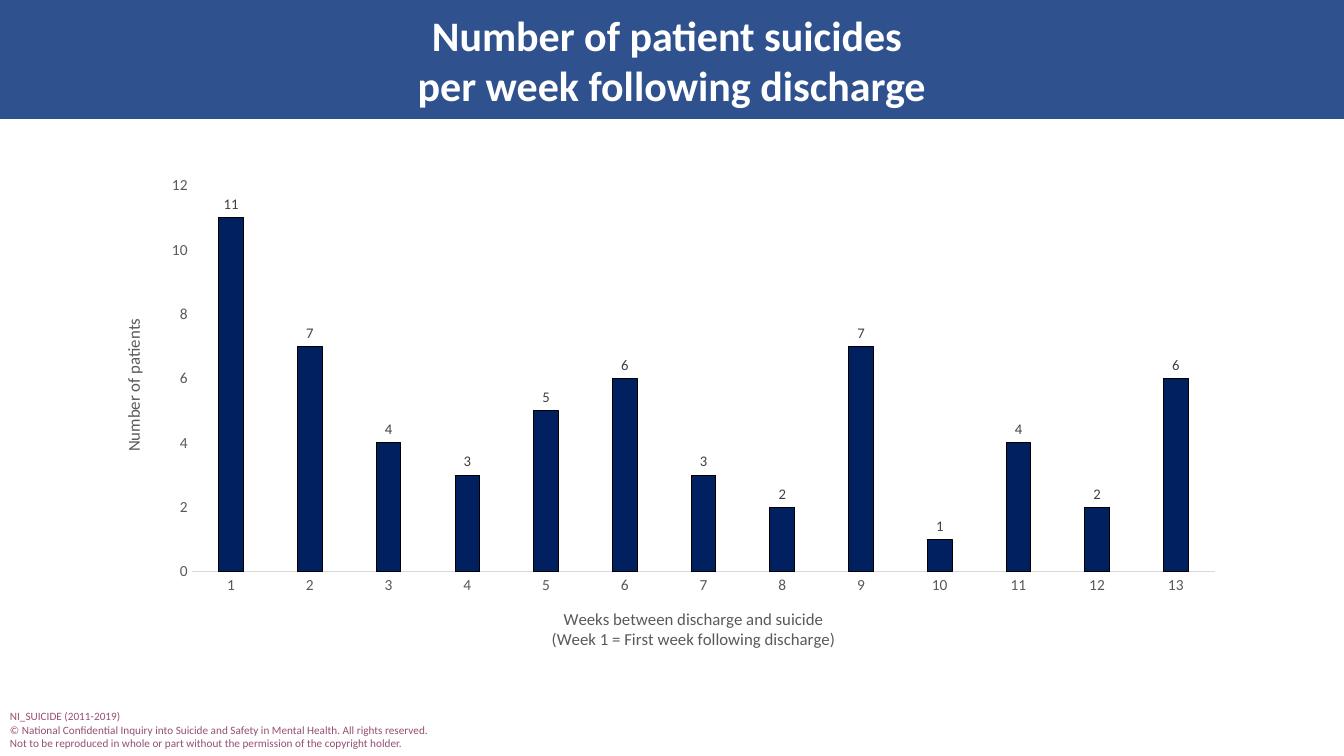
from lxml import etree
from pptx import Presentation
from pptx.chart.data import CategoryChartData
from pptx.dml.color import RGBColor
from pptx.enum.chart import XL_CHART_TYPE as ChartType, XL_LABEL_POSITION as LabelPosition
from pptx.enum.chart import XL_TICK_MARK as TickMark
from pptx.enum.shapes import MSO_SHAPE as Preset
from pptx.enum.text import MSO_ANCHOR as Anchor, MSO_AUTO_SIZE as AutoSize, PP_ALIGN as Align
from pptx.oxml.ns import qn
from pptx.util import Inches, Pt

FONT = "Calibri"
COLORS = {
    "banner": "2F528F", "title": "FFFFFF", "footer": "954F72",
    "bar": "002060", "outline": "000000", "axis_text": "595959",
    "axis_line": "D9D9D9", "label": "404040",
}
TITLE = ["Number of patient suicides ", "per week following discharge"]
FOOTER = [
    "NI_SUICIDE (2011-2019)",
    "© National Confidential Inquiry into Suicide and Safety in Mental Health. All rights reserved.",
    "Not to be reproduced in whole or part without the permission of the copyright holder.",
]
WEEK_TITLE = ["Weeks between discharge and suicide", "(Week 1 = First week following discharge)"]
PATIENTS_PER_WEEK = [11, 7, 4, 3, 5, 6, 3, 2, 7, 1, 4, 2, 6]


def color(name):
    return RGBColor.from_string(COLORS[name])


def style_font(font, size, color_name, bold=False):
    font.name, font.size, font.bold = FONT, Pt(size), bold
    font.color.rgb = color(color_name)


def write_lines(frame, lines, size, color_name, bold=False, align=None):
    """Write one paragraph per line, all in the same font."""
    for index, line in enumerate(lines):
        paragraph = frame.add_paragraph() if index else frame.paragraphs[0]
        paragraph.text = line
        paragraph.alignment = align
        style_font(paragraph.font, size, color_name, bold)


def add_banner(slide, left, top, width, height):
    banner = slide.shapes.add_shape(
        Preset.RECTANGLE, Inches(left), Inches(top), Inches(width), Inches(height))
    banner.shadow.inherit = False
    banner.fill.solid()
    banner.fill.fore_color.rgb = color("banner")
    banner.line.fill.background()
    margin = 0.14
    title = slide.shapes.add_textbox(
        Inches(left), Inches(top + margin), Inches(width), Inches(height - 2 * margin))
    title.text_frame.word_wrap = True
    title.text_frame.vertical_anchor = Anchor.MIDDLE
    write_lines(title.text_frame, TITLE, 30, "title", bold=True, align=Align.CENTER)


def add_footer(slide, left, top, width, height):
    footer = slide.shapes.add_textbox(Inches(left), Inches(top), Inches(width), Inches(height))
    footer.text_frame.word_wrap = False
    footer.text_frame.auto_size = AutoSize.SHAPE_TO_FIT_TEXT
    write_lines(footer.text_frame, FOOTER, 8, "footer")


def style_axis(axis, title_lines):
    axis.has_major_gridlines = False
    axis.major_tick_mark = axis.minor_tick_mark = TickMark.NONE
    style_font(axis.tick_labels.font, 11, "axis_text")
    write_lines(axis.axis_title.text_frame, title_lines, 12, "axis_text")


def set_plot_layout(chart, **fractions):
    """Fix the inner plot area as fractions of the chart box."""
    plot_area = chart.plots[0]._element.getparent()
    for layout in plot_area.findall(qn("c:layout")):
        plot_area.remove(layout)
    layout = etree.Element(qn("c:layout"))
    manual = etree.SubElement(layout, qn("c:manualLayout"))
    settings = {"layoutTarget": "inner", "xMode": "edge", "yMode": "edge", **fractions}
    for tag, value in settings.items():
        etree.SubElement(manual, qn(f"c:{tag}")).set("val", str(value))
    plot_area.insert(0, layout)


def add_week_chart(slide, left, top, width, height):
    data = CategoryChartData()
    data.categories = [str(week) for week in range(1, len(PATIENTS_PER_WEEK) + 1)]
    data.add_series("Series 1", PATIENTS_PER_WEEK)
    chart = slide.shapes.add_chart(
        ChartType.COLUMN_CLUSTERED, Inches(left), Inches(top),
        Inches(width), Inches(height), data).chart
    chart.has_title = chart.has_legend = False
    style_font(chart.font, 10, "outline")

    style_axis(chart.category_axis, WEEK_TITLE)
    chart.category_axis.format.line.color.rgb = color("axis_line")
    chart.category_axis.format.line.width = Pt(0.75)
    style_axis(chart.value_axis, ["Number of patients"])
    chart.value_axis.format.line.fill.background()
    chart.value_axis.minimum_scale = 0
    chart.value_axis.maximum_scale = 12
    chart.value_axis.major_unit = 2

    plot = chart.plots[0]
    plot.vary_by_categories = False
    plot.gap_width, plot.overlap = 219, -2
    bars = plot.series[0].format
    bars.fill.solid()
    bars.fill.fore_color.rgb = color("bar")
    bars.line.color.rgb = color("outline")
    bars.line.width = Pt(0.75)
    plot.has_data_labels = True
    plot.data_labels.show_value = True
    plot.data_labels.position = LabelPosition.OUTSIDE_END
    style_font(plot.data_labels.font, 10.5, "label")
    set_plot_layout(chart, x=0.08, y=0.04, w=0.9, h=0.76)


def main():
    presentation = Presentation()
    presentation.slide_width, presentation.slide_height = Inches(13.33), Inches(7.5)
    slide = presentation.slides.add_slide(presentation.slide_layouts[6])
    add_banner(slide, 0, 0, 13.33, 1.18)
    add_footer(slide, 0, 6.99, 4.4, 0.51)
    add_week_chart(slide, 1, 1.64, 11.28, 5.04)
    presentation.save("out.pptx")


if __name__ == "__main__":
    main()
